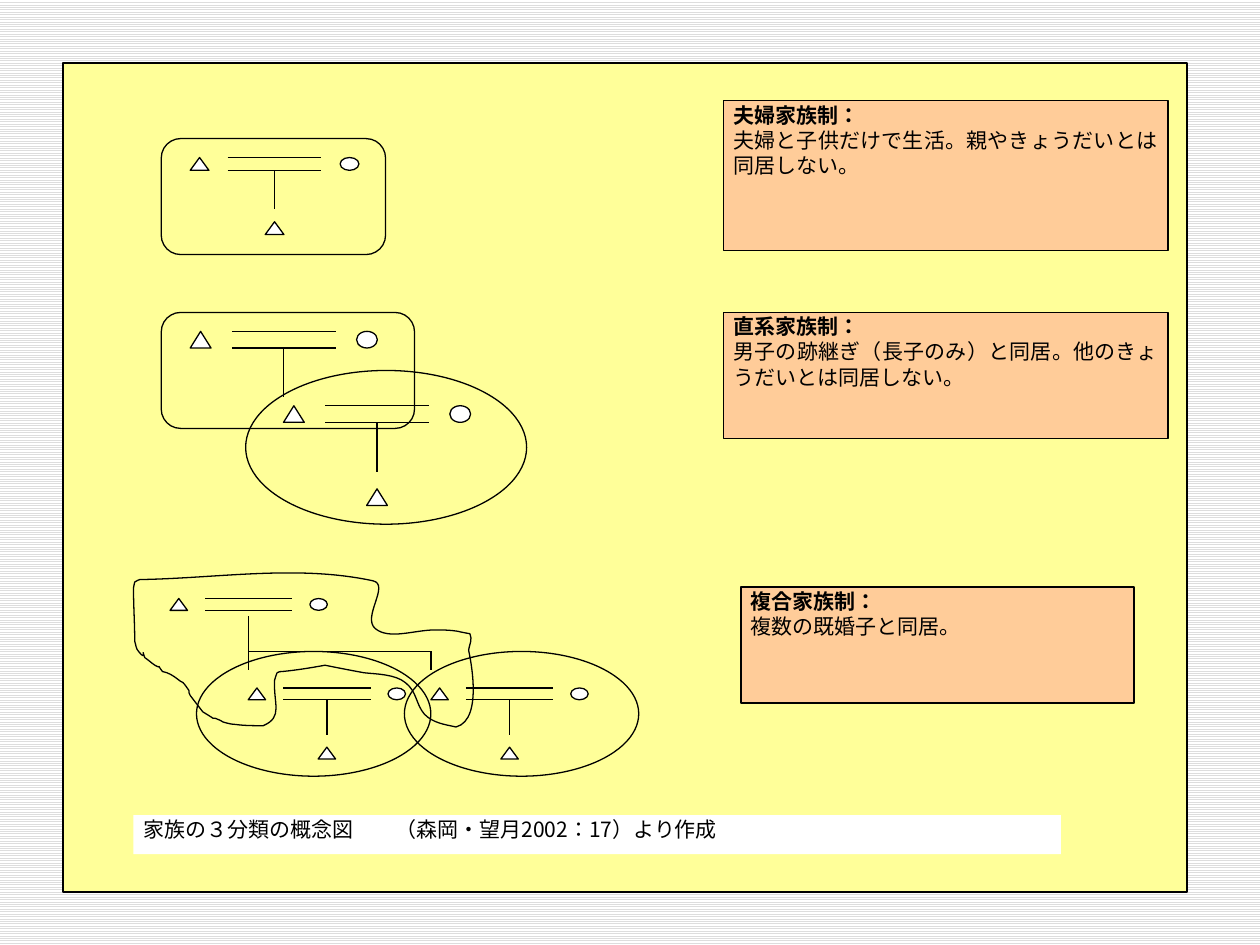
from lxml.etree import SubElement
from pptx import Presentation
from pptx.dml.color import RGBColor
from pptx.enum.dml import MSO_PATTERN as Pattern
from pptx.enum.lang import MSO_LANGUAGE_ID as Language
from pptx.enum.shapes import MSO_CONNECTOR as Connector, MSO_SHAPE as Shape
from pptx.enum.text import MSO_ANCHOR as Anchor, PP_ALIGN as Align
from pptx.oxml.ns import qn
from pptx.util import Pt

PX = 9144  # 100 px to the inch
COLORS = {
    "ink": "000000",
    "white": "FFFFFF",
    "stripe": "DDDDDD",
    "panel": "FFFF99",
    "note": "FFCC99",
}


def emu(px):
    return round(px * PX)


def color(name):
    return RGBColor.from_string(COLORS[name])


class Diagram:
    font = "Noto Sans CJK JP"
    size = Pt(12)
    stroke = Pt(0.75)

    def __init__(self, page):
        self.page = page

    def paint(self, shape, fill, outlined=True):
        shape.shadow.inherit = False
        if fill:
            shape.fill.solid()
            shape.fill.fore_color.rgb = color(fill)
        else:
            shape.fill.background()
        if outlined:
            shape.line.color.rgb = color("ink")
            shape.line.width = self.stroke
        else:
            shape.line.fill.background()
        return shape

    def shape(self, kind, x, y, w, h, fill=None, outlined=True):
        shape = self.page.shapes.add_shape(kind, *map(emu, (x, y, w, h)))
        return self.paint(shape, fill, outlined)

    def line(self, x1, y1, x2, y2):
        line = self.page.shapes.add_connector(
            Connector.STRAIGHT, *map(emu, (x1, y1, x2, y2)))
        line.line.color.rgb = color("ink")
        line.line.width = self.stroke
        SubElement(line._element.spPr, qn("a:effectLst"))

    def outline(self, start, curves):
        """Closed outline of cubic curves: two handles and an end each."""
        builder = self.page.shapes.build_freeform(*start, scale=PX)
        builder.add_line_segments([curve[4:] for curve in curves], close=True)
        shape = self.paint(builder.convert_to_shape(), None)
        left, top = round(shape.left / PX), round(shape.top / PX)
        segments = list(shape._element.iter(qn("a:lnTo")))
        for segment, (x1, y1, x2, y2, *end) in zip(segments, curves):
            curve = segment.makeelement(qn("a:cubicBezTo"))
            segment.getparent().replace(segment, curve)
            for x, y in ((x1, y1), (x2, y2), end):
                SubElement(curve, qn("a:pt"), x=str(x - left), y=str(y - top))

    def couple(self, x, y, span, drop, child=True):
        """Husband, wife and marriage bars; the stem and child hang below."""
        unit, height = span / 16, drop / 5
        person = (2 * unit, height, "white")
        self.shape(Shape.ISOSCELES_TRIANGLE, x, y, *person)
        self.shape(Shape.OVAL, x + span, y, *person)
        for bar in (y, y + height):
            self.line(x + 4 * unit, bar, x + 14 * unit, bar)
        if child:
            stem = x + 9 * unit
            self.line(stem, y + height, stem, y + 4 * height)
            self.shape(Shape.ISOSCELES_TRIANGLE, x + 8 * unit, y + drop, *person)

    def text_box(self, x, y, w, h, fill, lines, outlined=True, tab=None):
        box = self.shape(Shape.RECTANGLE, x, y, w, h, fill, outlined)
        frame = box.text_frame
        frame.word_wrap = True
        frame.vertical_anchor = Anchor.TOP
        frame.margin_left = frame.margin_right = emu(8)
        frame.margin_top = frame.margin_bottom = emu(1)
        for index, (text, bold) in enumerate(lines):
            para = frame.add_paragraph() if index else frame.paragraphs[0]
            para.alignment = Align.JUSTIFY
            if tab:
                stops = SubElement(para._p.get_or_add_pPr(), qn("a:tabLst"))
                SubElement(stops, qn("a:tab"), pos=str(emu(tab)), algn="l")
            span = para.add_run()
            span.text = text
            span.font.size = self.size
            span.font.bold = bold
            span.font.name = self.font
            span.font.language_id = Language.JAPANESE
            span.font.color.rgb = color("ink")
            SubElement(span._r.get_or_add_rPr(), qn("a:ea"), typeface=self.font)


# Joint family boundary
JOINT_START = (107, 462)
JOINT_CURVES = [
    (109, 461, 110, 460, 111, 460), (173, 459, 236, 448, 296, 461),
    (310, 464, 287, 490, 298, 499), (309, 508, 329, 500, 345, 500),
    (351, 500, 357, 500, 363, 501), (367, 502, 373, 503, 373, 503),
    (375, 508, 373, 510, 372, 516), (372, 517, 385, 571, 362, 577),
    (353, 575, 344, 574, 337, 567), (330, 559, 331, 549, 322, 542),
    (314, 535, 298, 535, 289, 534), (278, 532, 268, 530, 258, 528),
    (247, 530, 235, 532, 224, 533), (223, 533, 221, 533, 220, 534),
    (219, 536, 218, 540, 218, 540), (217, 559, 225, 569, 209, 576),
    (202, 576, 194, 576, 187, 575), (183, 575, 177, 573, 177, 573),
    (175, 572, 174, 571, 173, 571), (172, 570, 170, 570, 169, 570),
    (166, 568, 161, 565, 161, 565), (158, 561, 154, 556, 151, 552),
    (150, 551, 150, 549, 150, 548), (143, 538, 147, 544, 141, 539),
    (137, 536, 134, 534, 129, 533), (123, 525, 130, 532, 123, 528),
    (120, 526, 118, 524, 115, 522), (111, 511, 118, 527, 110, 517),
    (108, 515, 108, 512, 107, 509), (107, 495, 106, 481, 106, 467),
    (106, 466, 107, 462, 107, 462),
]

NOTES = [
    (574, 80, 353, 119, "夫婦家族制：",
     "夫婦と子供だけで生活。親やきょうだいとは同居しない。"),
    (574, 248, 353, 100, "直系家族制：",
     "男子の跡継ぎ（長子のみ）と同居。他のきょうだいとは同居しない。"),
    (588, 466, 312, 92, "複合家族制：", "複数の既婚子と同居。"),
]


def main():
    deck = Presentation()
    deck.slide_width, deck.slide_height = emu(1000), emu(750)
    page = deck.slides.add_slide(deck.slide_layouts[6])
    diagram = Diagram(page)

    # Striped background and panel
    backdrop = page.background.fill
    backdrop.patterned()
    backdrop.pattern = Pattern.LIGHT_HORIZONTAL
    backdrop.fore_color.rgb = color("stripe")
    backdrop.back_color.rgb = color("white")
    diagram.shape(Shape.RECTANGLE, 50, 50, 892, 658, "panel")

    # Conjugal family
    diagram.couple(151, 125, 119, 51)
    diagram.shape(Shape.ROUNDED_RECTANGLE, 128, 110, 178, 92)

    # Stem family: the heir below is the first couple's child
    diagram.couple(151, 263, 132, 66, child=False)
    diagram.line(225, 276, 225, 315)
    diagram.couple(225, 322, 132, 66)
    diagram.shape(Shape.ROUNDED_RECTANGLE, 128, 248, 201, 92)
    diagram.shape(Shape.OVAL, 195, 294, 223, 122)

    # Joint family: two married children
    diagram.couple(135, 475, 111, 47, child=False)
    diagram.line(197, 489, 197, 532)
    for x in (342, 197):
        diagram.couple(x, 546, 111, 47)
    diagram.line(197, 517, 342, 517)
    diagram.line(342, 517, 342, 532)
    diagram.outline(JOINT_START, JOINT_CURVES)
    for x in (156, 321):
        diagram.shape(Shape.OVAL, x, 517, 186, 99)

    # Explanations
    for x, y, w, h, title, body in NOTES:
        diagram.text_box(x, y, w, h, "note", [(title, True), (body, False)])

    # Caption
    caption = "家族の３分類の概念図\t（森岡・望月2002：17）より作成"
    diagram.text_box(106, 647, 736, 31, "white", [(caption, False)],
                     outlined=False, tab=200)

    deck.save("out.pptx")


if __name__ == "__main__":
    main()
